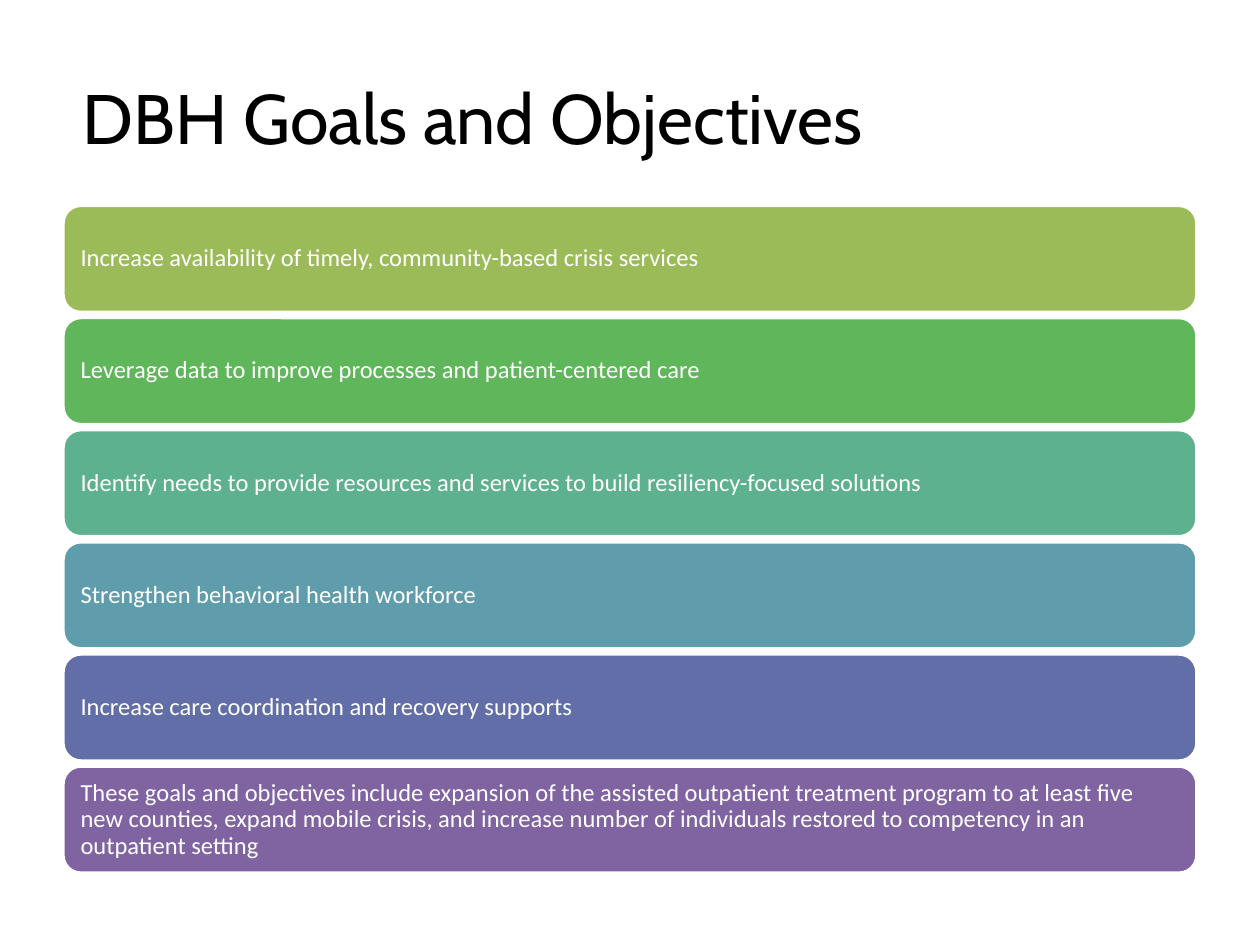
from pptx import Presentation
from pptx.dml.color import RGBColor
from pptx.enum.shapes import MSO_SHAPE as Shape
from pptx.enum.text import MSO_ANCHOR as Anchor, MSO_AUTO_SIZE as AutoSize, PP_ALIGN as Align
from pptx.util import Inches, Pt

TITLE = "DBH Goals and Objectives"
GOALS = [
    ("Increase availability of timely, community-based crisis services", "9BBB59"),
    ("Leverage data to improve processes and patient-centered care", "5FB65B"),
    ("Identify needs to provide resources and services to build resiliency-focused solutions", "5DB18E"),
    ("Strengthen behavioral health workforce", "5F9DAC"),
    ("Increase care coordination and recovery supports", "626EA7"),
    ("These goals and objectives include expansion of the assisted outpatient treatment program "
     "to at least five new counties, expand mobile crisis, and increase number of individuals "
     "restored to competency in an outpatient setting", "8064A2"),
]
WIDTH, HEIGHT = 10, 7.5
MARGIN = 0.05 * WIDTH
BAR_TOP, BAR_HEIGHT, BAR_PITCH = 1.63, 0.85, 0.89


def color(value):
    return RGBColor.from_string(value)


def write(shape, text, *, size, font, fill, align=Align.LEFT, spacing=1.0, inset=0.1):
    frame = shape.text_frame
    frame.text = text
    frame.word_wrap = True
    frame.auto_size = AutoSize.NONE
    frame.vertical_anchor = Anchor.MIDDLE
    frame.margin_left = frame.margin_right = Inches(inset)
    paragraph = frame.paragraphs[0]
    paragraph.alignment = align
    paragraph.line_spacing = spacing
    paragraph.font.size = Pt(size)
    paragraph.font.name = font
    paragraph.font.color.rgb = color(fill)


def add_bar(slide, row, text, fill):
    bar = slide.shapes.add_shape(
        Shape.ROUNDED_RECTANGLE, Inches(MARGIN), Inches(BAR_TOP + row * BAR_PITCH),
        Inches(WIDTH - 2 * MARGIN), Inches(BAR_HEIGHT))
    bar.shadow.inherit = False
    bar.fill.solid()
    bar.fill.fore_color.rgb = color(fill)
    bar.line.color.rgb = color("FFFFFF")
    bar.line.width = Pt(2)
    write(bar, text, size=14, font="Calibri", fill="FFFFFF", spacing=0.9)


def main():
    presentation = Presentation()
    presentation.slide_width, presentation.slide_height = Inches(WIDTH), Inches(HEIGHT)
    slide = presentation.slides.add_slide(presentation.slide_layouts[5])
    title = slide.shapes.title
    title.left, title.top = Inches(MARGIN), Inches(0.04 * HEIGHT)
    title.width, title.height = Inches(0.65 * WIDTH), Inches(1.25)
    write(title, TITLE, size=40, font="Cabin", fill="000000", align=Align.CENTER)
    for row, (text, fill) in enumerate(GOALS):
        add_bar(slide, row, text, fill)
    presentation.save("out.pptx")


if __name__ == "__main__":
    main()
